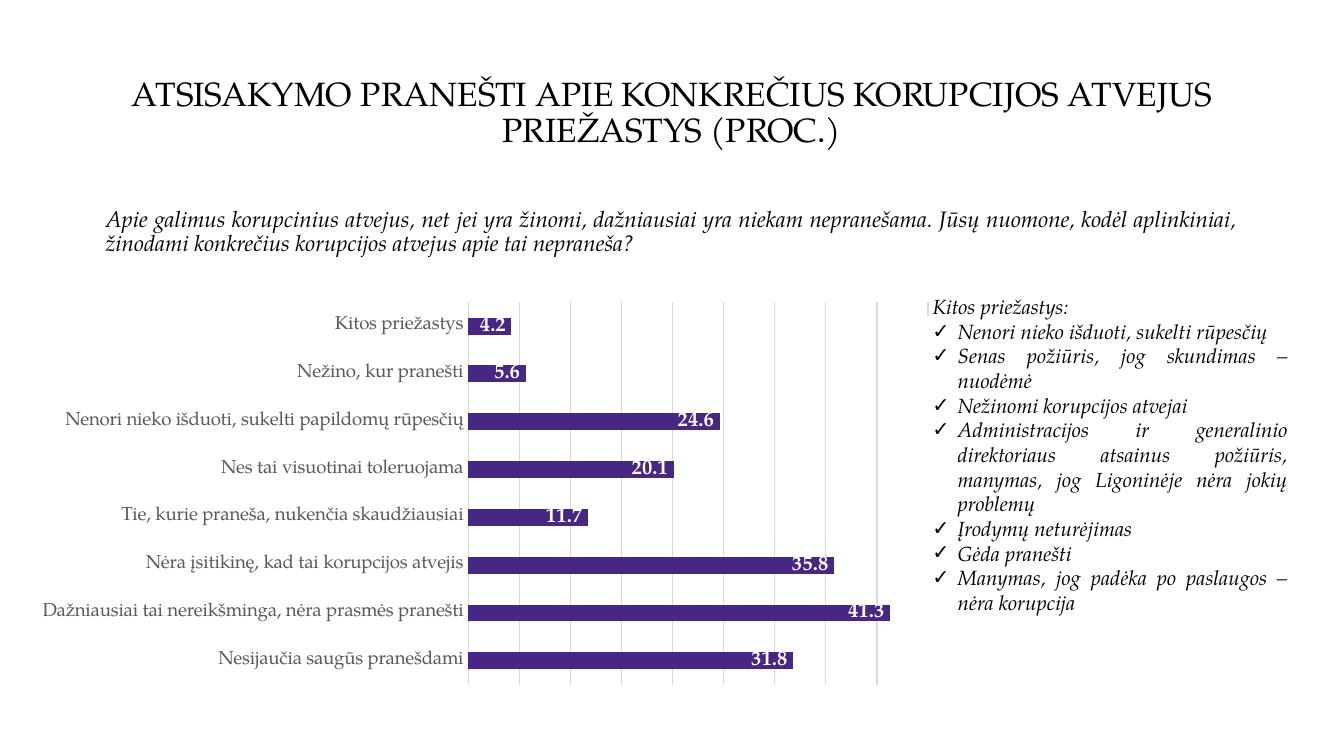
"""Build a slide on the reasons for not reporting corruption."""
from lxml.etree import SubElement
from pptx import Presentation
from pptx.chart.data import CategoryChartData
from pptx.dml.color import RGBColor
from pptx.enum.chart import XL_CHART_TYPE, XL_LABEL_POSITION, XL_TICK_LABEL_POSITION, XL_TICK_MARK
from pptx.enum.shapes import MSO_SHAPE
from pptx.enum.text import MSO_ANCHOR, PP_ALIGN
from pptx.oxml import parse_xml
from pptx.oxml.ns import nsdecls, qn
from pptx.util import Pt

FACE = "TeX Gyre Pagella"
TITLE = "ATSISAKYMO PRANEŠTI APIE KONKREČIUS KORUPCIJOS ATVEJUS PRIEŽASTYS (PROC.)"
QUERY = (
    "Apie galimus korupcinius atvejus, net jei yra žinomi, dažniausiai yra niekam "
    "nepranešama. Jūsų nuomone, kodėl aplinkiniai, žinodami konkrečius korupcijos "
    "atvejus apie tai nepraneša?"
)
SHARES = {
    "Nesijaučia saugūs pranešdami": 31.8,
    "Dažniausiai tai nereikšminga, nėra prasmės pranešti": 41.3,
    "Nėra įsitikinę, kad tai korupcijos atvejis": 35.8,
    "Tie, kurie praneša, nukenčia skaudžiausiai": 11.7,
    "Nes tai visuotinai toleruojama": 20.1,
    "Nenori nieko išduoti, sukelti papildomų rūpesčių": 24.6,
    "Nežino, kur pranešti": 5.6,
    "Kitos priežastys": 4.2,
}
OTHERS = [
    "Nenori nieko išduoti, sukelti rūpesčių",
    "Senas požiūris, jog skundimas – nuodėmė",
    "Nežinomi korupcijos atvejai",
    "Administracijos ir generalinio direktoriaus atsainus požiūris, manymas, "
    "jog Ligoninėje nėra jokių problemų",
    "Įrodymų neturėjimas",
    "Gėda pranešti",
    "Manymas, jog padėka po paslaugos – nėra korupcija",
]


def color(code):
    """Turn a hex string into a colour."""
    return RGBColor.from_string(code)


def apply(item, values):
    """Set each named attribute of an item."""
    for name, value in values.items():
        setattr(item, name, value)


def style(font, size, code, **extra):
    """Give a font its face, size and colour."""
    apply(font, {"name": FACE, "size": Pt(size), **extra})
    font.color.rgb = color(code)


def stroke(line, code, width):
    """Give a line its colour and width."""
    line.color.rgb = color(code)
    line.width = Pt(width)


def write(para, text, size, format, **extra):
    """Fill a paragraph with one run of black text."""
    apply(para, format)
    run = para.add_run()
    run.text = text
    style(run.font, size, "000000", **extra)


def add_text(slide, box, text, size, anchor, format, **extra):
    """Add a wrapped text box with one paragraph."""
    frame = slide.shapes.add_textbox(*map(Pt, box)).text_frame
    apply(frame, {"word_wrap": True, "vertical_anchor": anchor})
    write(frame.paragraphs[0], text, size, {"line_spacing": 0.9, **format}, **extra)


def add_tick(para):
    """Give a paragraph a hanging check mark."""
    props = para._p.get_or_add_pPr()
    apply_indent = {"marL": Pt(13.5), "indent": -Pt(13.5)}
    for name, value in apply_indent.items():
        props.set(name, str(value))
    SubElement(props, qn("a:buFont"), typeface="Arial")
    SubElement(props, qn("a:buChar"), char="✓")


def add_panel(slide, box, head, items):
    """Add the white panel with a heading and a ticked list."""
    shape = slide.shapes.add_shape(MSO_SHAPE.FLOWCHART_PROCESS, *map(Pt, box))
    shape.shadow.inherit = False
    shape.fill.solid()
    shape.fill.fore_color.rgb = color("FFFFFF")
    stroke(shape.line, "FFFFFF", 1)
    frame = shape.text_frame
    apply(frame, {"word_wrap": True, "vertical_anchor": MSO_ANCHOR.MIDDLE,
                  "margin_bottom": Pt(82.6)})
    format = {"alignment": PP_ALIGN.JUSTIFY}
    write(frame.paragraphs[0], head, 11, format, italic=True)
    for item in items:
        para = frame.add_paragraph()
        write(para, item, 11, format, italic=True)
        add_tick(para)


def set_plot(chart, x, y, w, h):
    """Fix the inner plot area as fractions of the chart."""
    area = chart._chartSpace.chart.plotArea
    for old in area.findall(qn("c:layout")):
        area.remove(old)
    sizes = "".join(f'<c:{key} val="{value}"/>' for key, value in
                    {"x": x, "y": y, "w": w, "h": h}.items())
    area.insert(0, parse_xml(
        f'<c:layout {nsdecls("c")}><c:manualLayout><c:layoutTarget val="inner"/>'
        f'<c:xMode val="edge"/><c:yMode val="edge"/>{sizes}</c:manualLayout></c:layout>'))


def add_bars(slide, box, shares):
    """Add the bar chart of shares."""
    data = CategoryChartData()
    data.categories = list(shares)
    data.add_series("Series 1", list(shares.values()))
    chart = slide.shapes.add_chart(XL_CHART_TYPE.BAR_CLUSTERED, *map(Pt, box), data).chart
    apply(chart, {"has_legend": False, "has_title": False})
    style(chart.font, 10, "000000", name="Arial")
    set_plot(chart, 0.487, 0.053, 0.513, 0.895)
    names, scale = chart.category_axis, chart.value_axis
    apply(names, {"major_tick_mark": XL_TICK_MARK.NONE,
                  "tick_label_position": XL_TICK_LABEL_POSITION.NEXT_TO_AXIS})
    style(names.tick_labels.font, 10, "595959")
    stroke(names.format.line, "D9D9D9", 0.75)
    apply(scale, {"visible": False, "minimum_scale": 0, "maximum_scale": 45,
                  "major_unit": 5, "has_major_gridlines": True})
    stroke(scale.major_gridlines.format.line, "D9D9D9", 0.75)
    plot = chart.plots[0]
    apply(plot, {"gap_width": 182, "vary_by_categories": False})
    bars = plot.series[0]
    bars.format.fill.solid()
    bars.format.fill.fore_color.rgb = color("482683")
    labels = bars.data_labels
    apply(labels, {"show_value": True, "position": XL_LABEL_POSITION.INSIDE_END})
    style(labels.font, 11, "FFFFFF", bold=True)


def main():
    """Build and save the slide."""
    deck = Presentation()
    apply(deck, {"slide_width": Pt(720), "slide_height": Pt(405)})
    slide = deck.slides.add_slide(deck.slide_layouts[6])
    add_text(slide, (49.5, 21.6, 621, 78.3), TITLE, 18, MSO_ANCHOR.MIDDLE,
             {"alignment": PP_ALIGN.CENTER})
    add_text(slide, (49.5, 108, 621, 257), QUERY, 12, MSO_ANCHOR.TOP,
             {"alignment": PP_ALIGN.JUSTIFY, "space_before": Pt(7.5)}, italic=True)
    add_bars(slide, (17.3, 149.8, 480.2, 229), SHARES)
    add_panel(slide, (492.5, 169.9, 204.5, 226), "Kitos priežastys:", OTHERS)
    deck.save("out.pptx")


if __name__ == "__main__":
    main()
